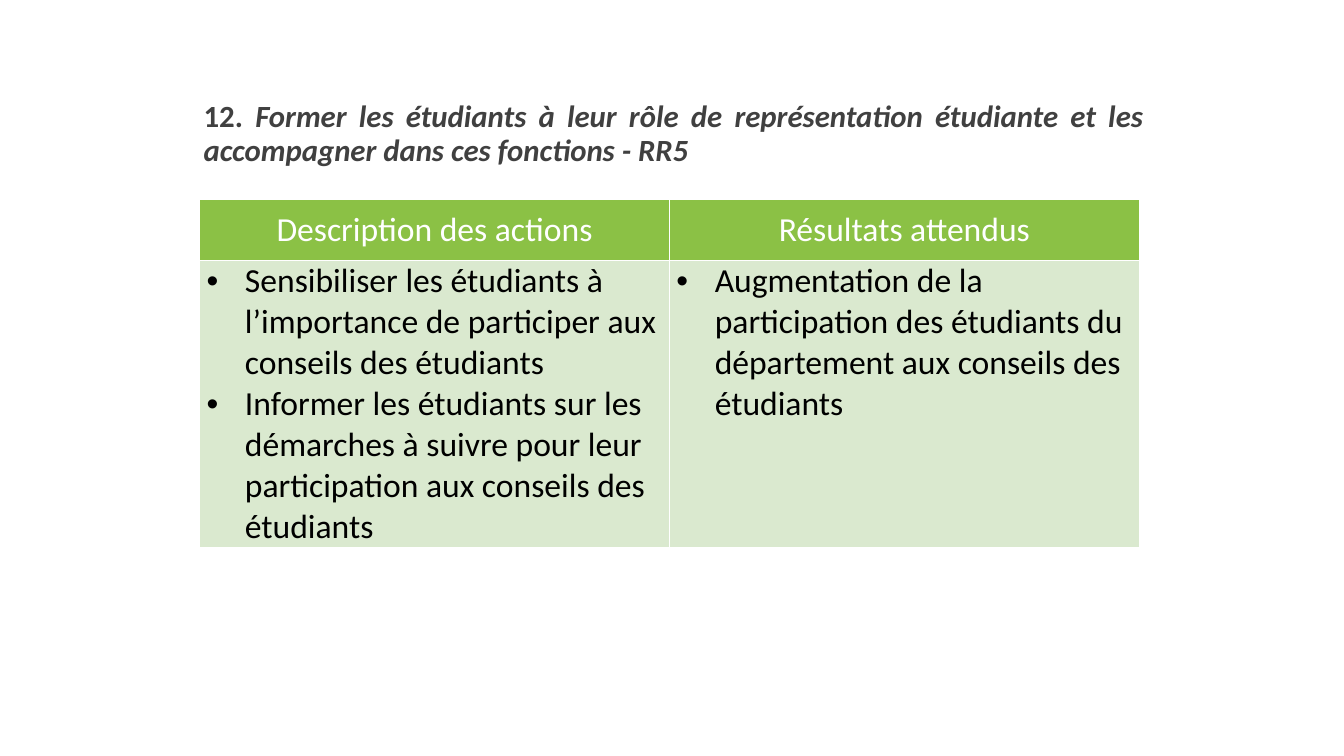
import pptx
import pptx.dml.color
import pptx.enum.text
import pptx.oxml
import pptx.oxml.ns
import pptx.util

WIDTH, HEIGHT = 13.33, 7.5
ALIGN = pptx.enum.text.PP_ALIGN
ANCHOR = pptx.enum.text.MSO_ANCHOR
HEADINGS = ["Description des actions", "Résultats attendus"]
ACTIONS = [
    "Sensibiliser les étudiants à l’importance de participer aux conseils des étudiants",
    "Informer les étudiants sur les démarches à suivre pour leur participation aux conseils des étudiants",
]
RESULTS = ["Augmentation de la participation des étudiants du département aux conseils des étudiants"]


def color(code):
    return pptx.dml.color.RGBColor.from_string(code)


def element(markup):
    name, rest = markup.split(" ", 1)
    return pptx.oxml.parse_xml(f"<a:{name} {pptx.oxml.ns.nsdecls('a')} {rest}")


class Slide:
    font = "Calibri"
    dark, white, black = "404040", "FFFFFF", "000000"
    green, pale = "8BC145", "DAE9CF"

    def __init__(self, deck):
        self.deck = deck
        self.page = deck.slides.add_slide(deck.slide_layouts.get_by_name("Title Only"))

    def area(self, left, top, width, height):
        across, down = self.deck.slide_width, self.deck.slide_height
        return int(left * across), int(top * down), int(width * across), int(height * down)

    def span(self, para, text, size, code, bold=False, italic=False):
        span = para.add_run()
        span.text = text
        span.font.name = self.font
        span.font.size = pptx.util.Pt(size)
        span.font.bold = bold
        span.font.italic = italic
        span.font.color.rgb = color(code)

    def title(self, number, text, *shares):
        box = self.page.shapes.title
        box.left, box.top, box.width, box.height = self.area(*shares)
        frame = box.text_frame
        frame.word_wrap = True
        frame.auto_size = pptx.enum.text.MSO_AUTO_SIZE.NONE
        frame.vertical_anchor = ANCHOR.MIDDLE
        para = frame.paragraphs[0]
        para.alignment = ALIGN.JUSTIFY
        para.line_spacing = 0.9
        self.span(para, number, 22, self.dark, bold=True)
        self.span(para, text, 22, self.dark, bold=True, italic=True)

    def bullet(self, para):
        properties = para._p.get_or_add_pPr()
        indent = pptx.util.Inches(0.38)
        properties.set("marL", str(indent))
        properties.set("indent", str(-indent))
        properties.append(element('buFont typeface="Arial"/>'))
        properties.append(element('buChar char="•"/>'))

    def cell(self, cell, texts, heading):
        for side in "LRTB":
            cell._tc.get_or_add_tcPr().append(element(
                f'ln{side} w="{pptx.util.Pt(1)}"><a:solidFill>'
                f'<a:srgbClr val="{self.white}"/></a:solidFill></a:ln{side}>'))
        cell.fill.solid()
        cell.fill.fore_color.rgb = color(self.green if heading else self.pale)
        cell.margin_left = cell.margin_right = pptx.util.Inches(0.1 if heading else 0.07)
        cell.margin_top = cell.margin_bottom = pptx.util.Inches(0.1 if heading else 0)
        cell.vertical_anchor = ANCHOR.TOP
        frame = cell.text_frame
        for index, text in enumerate(texts):
            para = frame.add_paragraph() if index else frame.paragraphs[0]
            para.alignment = ALIGN.CENTER if heading else ALIGN.LEFT
            if not heading:
                self.bullet(para)
            self.span(para, text, 24, self.white if heading else self.black)

    def table(self, headings, columns, heights, *shares):
        place = self.area(*shares)
        table = self.page.shapes.add_table(2, len(headings), *place).table
        for row, height in zip(table.rows, heights):
            row.height = pptx.util.Inches(height)
        for index, (heading, texts) in enumerate(zip(headings, columns)):
            table.columns[index].width = place[2] // len(headings)
            self.cell(table.cell(0, index), [heading], True)
            self.cell(table.cell(1, index), texts, False)


def main():
    deck = pptx.Presentation()
    deck.slide_width = pptx.util.Inches(WIDTH)
    deck.slide_height = pptx.util.Inches(HEIGHT)
    slide = Slide(deck)
    slide.title(
        "12. ",
        "Former les étudiants à leur rôle de représentation étudiante et les accompagner dans ces fonctions - RR5",
        1.92 / WIDTH, 0.75 / HEIGHT, 9.52 / WIDTH, 1.17 / HEIGHT)
    slide.table(
        HEADINGS, [ACTIONS, RESULTS], [0.6, 2.8],
        1.98 / WIDTH, 1.98 / HEIGHT, 9.32 / WIDTH, 3.4 / HEIGHT)
    deck.save("out.pptx")


if __name__ == "__main__":
    main()
